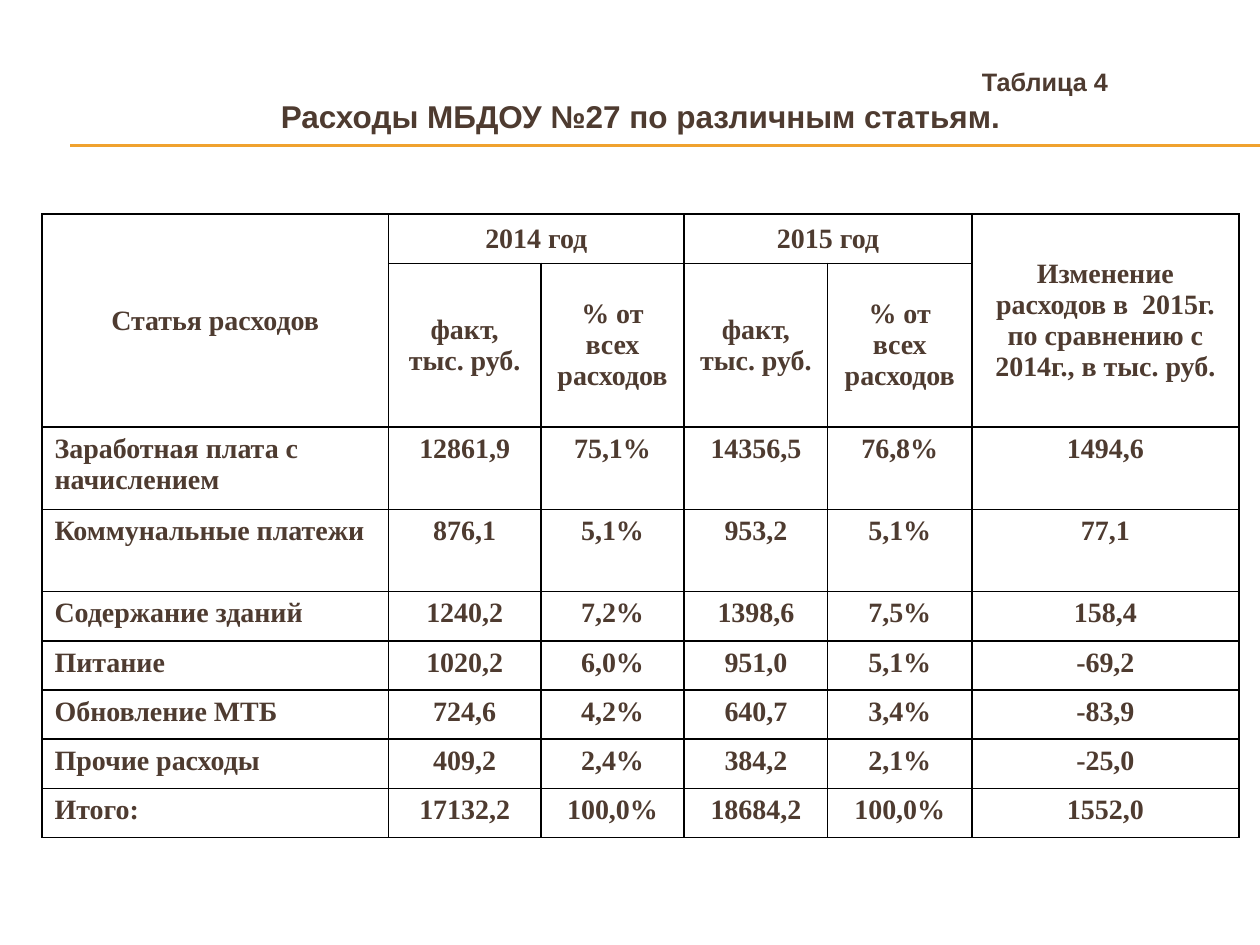
from dataclasses import dataclass

from lxml import etree
from pptx import Presentation
from pptx.dml.color import RGBColor
from pptx.enum.shapes import MSO_CONNECTOR
from pptx.enum.text import MSO_ANCHOR, PP_ALIGN
from pptx.oxml.ns import qn
from pptx.util import Pt

LEFT, CENTER = PP_ALIGN.LEFT, PP_ALIGN.CENTER
TOP, MIDDLE = MSO_ANCHOR.TOP, MSO_ANCHOR.MIDDLE
STRAIGHT = MSO_CONNECTOR.STRAIGHT

BROWN, AMBER, BLACK = "4E3B30", "F0A22E", "000000"
PAGE_WIDTH, PAGE_HEIGHT = 720, 540
CONTENT_LEFT, CONTENT_WIDTH = 24, 684
TABLE_TOP = 122.4
LABEL_INDENT = 530


@dataclass(frozen=True)
class Line:
    text: str
    size: float
    font: str
    align: PP_ALIGN = CENTER
    indent: float = 0


@dataclass(frozen=True)
class Header:
    text: str
    row: int
    column: int
    row_span: int = 1
    column_span: int = 1


HEADING = [
    Line("Таблица 4", 14.4, "Arial", LEFT, LABEL_INDENT),
    Line("Расходы МБДОУ №27 по различным статьям.", 18, "Arial"),
]
RULE_TOPS = [82.8, 83.5]

HEADERS = [
    Header("Статья расходов", 0, 0, row_span=2),
    Header("2014 год", 0, 1, column_span=2),
    Header("2015 год", 0, 3, column_span=2),
    Header("Изменение расходов в  2015г. по сравнению с 2014г., в тыс. руб.", 0, 5, row_span=2),
    *(Header("факт, тыс. руб.", 1, column) for column in (1, 3)),
    *(Header("% от всех расходов", 1, column) for column in (2, 4)),
]
EXPENSES = [
    ("Заработная плата с начислением", "12861,9", "75,1%", "14356,5", "76,8%", "1494,6"),
    ("Коммунальные платежи", "876,1", "5,1%", "953,2", "5,1%", "77,1"),
    ("Содержание зданий", "1240,2", "7,2%", "1398,6", "7,5%", "158,4"),
    ("Питание", "1020,2", "6,0%", "951,0", "5,1%", "-69,2"),
    ("Обновление МТБ", "724,6", "4,2%", "640,7", "3,4%", "-83,9"),
    ("Прочие расходы", "409,2", "2,4%", "384,2", "2,1%", "-25,0"),
    ("Итого:", "17132,2", "100,0%", "18684,2", "100,0%", "1552,0"),
]
COLUMN_WIDTHS = [198, 87, 82, 82, 82.4, 152.6]
ROW_HEIGHTS = [28.1, 93.6] + [47] * 2 + [28.1] * 5


def color(value: str) -> RGBColor:
    return RGBColor.from_string(value)


def apply(target, values: dict) -> None:
    for name, value in values.items():
        setattr(target, name, value)


def write_line(para, line: Line) -> None:
    para.alignment = line.align
    if line.indent:
        para._p.get_or_add_pPr().set("marL", str(Pt(line.indent)))
    span = para.add_run()
    span.text = line.text
    apply(span.font, {"name": line.font, "size": Pt(line.size), "bold": True})
    span.font.color.rgb = color(BROWN)


def draw_rule(page, top: float) -> None:
    rule = page.shapes.add_connector(STRAIGHT, Pt(40.3), Pt(top), Pt(PAGE_WIDTH), Pt(top))
    rule.line.color.rgb = color(AMBER)
    rule.line.width = Pt(0.75)
    etree.SubElement(rule._element.spPr, qn("a:effectLst"))


def draw_heading(page, lines: list[Line]) -> None:
    box = page.shapes.add_textbox(Pt(CONTENT_LEFT), Pt(36), Pt(CONTENT_WIDTH), Pt(45))
    frame = box.text_frame
    apply(frame, {"word_wrap": True, "vertical_anchor": TOP, "margin_top": Pt(2)})
    for index, line in enumerate(lines):
        write_line(frame.add_paragraph() if index else frame.paragraphs[0], line)


def set_borders(cell) -> None:
    properties = cell._tc.get_or_add_tcPr()
    for index, side in enumerate(("lnL", "lnR", "lnT", "lnB")):
        border = etree.Element(qn(f"a:{side}"), w=str(Pt(1)))
        fill = etree.SubElement(border, qn("a:solidFill"))
        etree.SubElement(fill, qn("a:srgbClr"), val=BLACK)
        properties.insert(index, border)


def write_cell(cell, text: str, align: PP_ALIGN, anchor: MSO_ANCHOR) -> None:
    cell.vertical_anchor = anchor
    write_line(cell.text_frame.paragraphs[0], Line(text, 16, "Times New Roman", align))


def draw_table(page) -> None:
    frame = page.shapes.add_table(
        len(ROW_HEIGHTS), len(COLUMN_WIDTHS),
        Pt(CONTENT_LEFT), Pt(TABLE_TOP), Pt(CONTENT_WIDTH), Pt(sum(ROW_HEIGHTS)),
    )
    table = frame.table
    apply(table, {"first_row": False, "horz_banding": False})
    for column, width in zip(table.columns, COLUMN_WIDTHS):
        column.width = Pt(width)
    for row, height in zip(table.rows, ROW_HEIGHTS):
        row.height = Pt(height)
        for cell in row.cells:
            cell.fill.background()
            set_borders(cell)

    # Header cells
    for header in HEADERS:
        cell = table.cell(header.row, header.column)
        if header.row_span > 1 or header.column_span > 1:
            cell.merge(table.cell(header.row + header.row_span - 1,
                                  header.column + header.column_span - 1))
        write_cell(cell, header.text, CENTER, MIDDLE)

    # Expense rows
    for row, values in enumerate(EXPENSES, start=2):
        for column, text in enumerate(values):
            write_cell(table.cell(row, column), text, CENTER if column else LEFT, TOP)


def main() -> None:
    deck = Presentation()
    apply(deck, {"slide_width": Pt(PAGE_WIDTH), "slide_height": Pt(PAGE_HEIGHT)})
    page = deck.slides.add_slide(deck.slide_layouts[6])
    for top in RULE_TOPS:
        draw_rule(page, top)
    draw_heading(page, HEADING)
    draw_table(page)
    deck.save("out.pptx")


if __name__ == "__main__":
    main()
